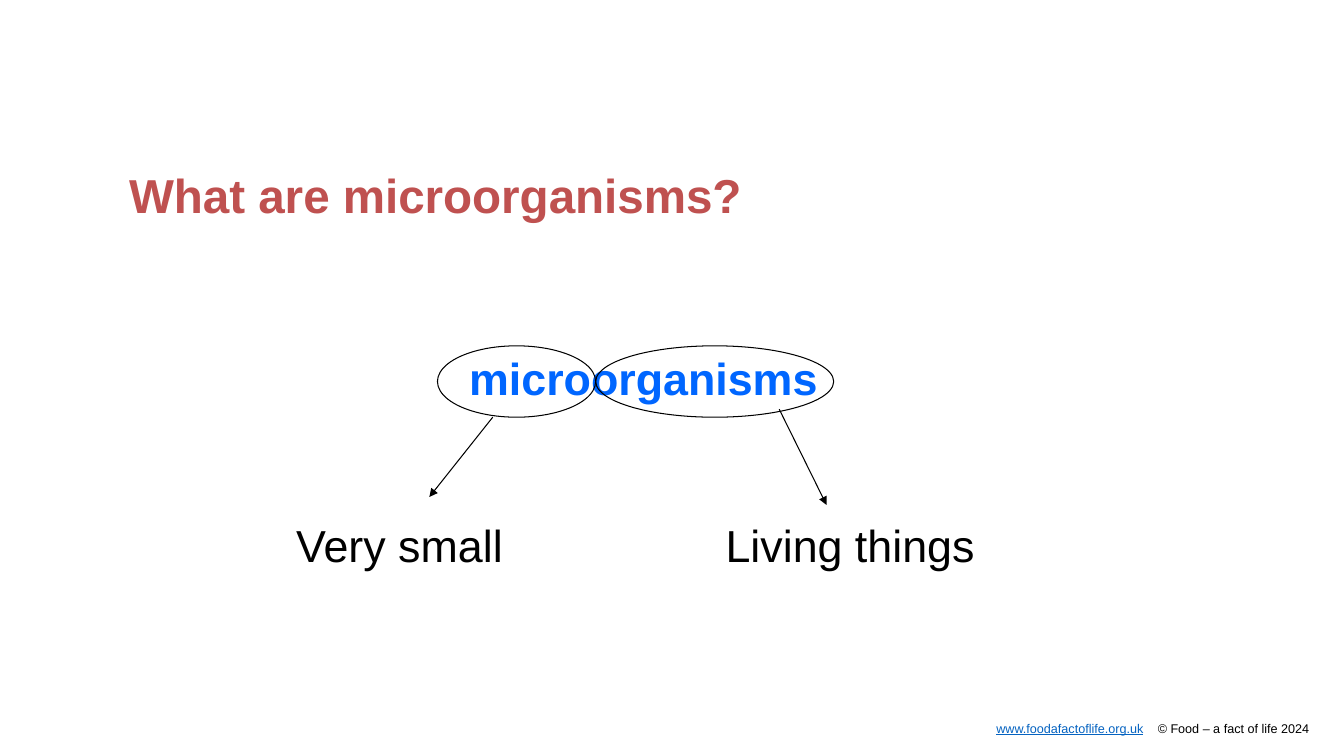
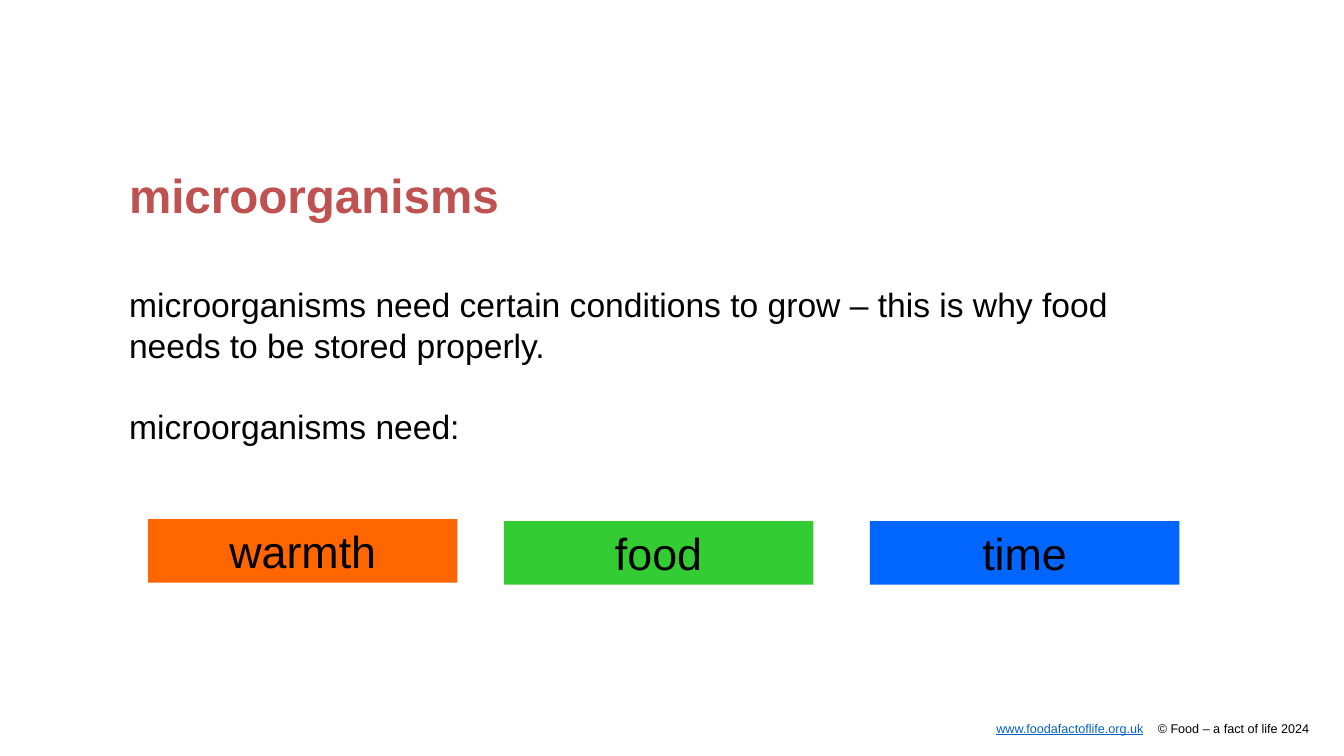
from lxml import etree
from pptx import Presentation
from pptx.dml.color import RGBColor
from pptx.enum.shapes import MSO_CONNECTOR, MSO_SHAPE
from pptx.enum.text import MSO_ANCHOR, PP_ALIGN
from pptx.oxml.ns import qn
from pptx.util import Pt

LEFT, CENTER = PP_ALIGN.LEFT, PP_ALIGN.CENTER
TOP = MSO_ANCHOR.TOP
OVAL, RECTANGLE = MSO_SHAPE.OVAL, MSO_SHAPE.RECTANGLE
STRAIGHT = MSO_CONNECTOR.STRAIGHT

BLACK = RGBColor(0x00, 0x00, 0x00)
RED = RGBColor(0xBF, 0x51, 0x50)
LINK_BLUE = RGBColor(0x05, 0x63, 0xC1)
BLUE = RGBColor(0x00, 0x66, 0xFF)
ORANGE = RGBColor(0xFF, 0x66, 0x00)
GREEN = RGBColor(0x33, 0xCC, 0x33)

FONT = "Arial"
MARGIN = 92.2
CONTENT_WIDTH = 765.4
LABEL_HEIGHT = 45.4
LABEL_SIZE = 32
LINE_WIDTH = 0.75


class Deck:
    """Holds the shared style and the current slide."""

    def __init__(self):
        self.presentation = Presentation()
        self.presentation.slide_width = Pt(960)
        self.presentation.slide_height = Pt(540)
        self.slide = None

    def add_slide(self, title):
        layout = self.presentation.slide_layouts[6]
        self.slide = self.presentation.slides.add_slide(layout)
        self.footer()
        paragraph = self.text_box(MARGIN, 123.1, CONTENT_WIDTH, 57)
        paragraph.line_spacing = 0.9
        self.run(paragraph, title, 34, RED, bold=True)

    def run(self, paragraph, text, size, color=BLACK, bold=False, underline=False):
        run = paragraph.add_run()
        run.text = text
        font = run.font
        font.name, font.size, font.bold = FONT, Pt(size), bold
        font.underline = underline
        font.color.rgb = color

    def frame(self, shape, align, inset_x, inset_y):
        """Prepare the text frame of a shape and return its first paragraph."""
        frame = shape.text_frame
        frame.word_wrap = True
        frame.vertical_anchor = TOP
        frame.margin_left = frame.margin_right = Pt(inset_x)
        frame.margin_top = frame.margin_bottom = Pt(inset_y)
        paragraph = frame.paragraphs[0]
        paragraph.alignment = align
        return paragraph

    def text_box(self, x, y, width, height, align=LEFT, inset_x=0, inset_y=0):
        box = self.slide.shapes.add_textbox(Pt(x), Pt(y), Pt(width), Pt(height))
        return self.frame(box, align, inset_x, inset_y)

    def footer(self):
        paragraph = self.text_box(711.7, 514.8, 230, 10.8)
        # The tab stop separates the address from the copyright line
        tabs = etree.SubElement(paragraph._p.get_or_add_pPr(), qn("a:tabLst"))
        etree.SubElement(tabs, qn("a:tab"), pos=str(Pt(115.3)), algn="l")
        self.run(paragraph, "www.foodafactoflife.org.uk", 9, LINK_BLUE, underline=True)
        self.run(paragraph, "\t© Food – a fact of life 2024", 9)

    def label(self, text, x, y, width, align=LEFT, color=BLACK, bold=False):
        paragraph = self.text_box(x, y, width, LABEL_HEIGHT, align, 7.2, 3.6)
        self.run(paragraph, text, LABEL_SIZE, color, bold)

    def body(self, texts):
        paragraph = self.text_box(MARGIN, 202.8, CONTENT_WIDTH, 120)
        frame = self.slide.shapes[-1].text_frame
        for index, text in enumerate(texts):
            if index:
                paragraph = frame.add_paragraph()
                paragraph.space_before = Pt(29)
            paragraph.line_spacing = Pt(29)
            self.run(paragraph, text, 24)

    def shape(self, kind, x, y, width, height):
        shape = self.slide.shapes.add_shape(kind, Pt(x), Pt(y), Pt(width), Pt(height))
        shape.shadow.inherit = False
        return shape

    def ring(self, x, y, width, height):
        ring = self.shape(OVAL, x, y, width, height)
        ring.fill.background()
        ring.line.color.rgb = BLACK
        ring.line.width = Pt(LINE_WIDTH)

    def block(self, text, color, x, y, width):
        block = self.shape(RECTANGLE, x, y, width, LABEL_HEIGHT)
        block.fill.solid()
        block.fill.fore_color.rgb = color
        block.line.fill.background()
        paragraph = self.frame(block, CENTER, 7.2, 3.6)
        self.run(paragraph, text, LABEL_SIZE)

    def arrow(self, start, end):
        points = [Pt(value) for value in (*start, *end)]
        arrow = self.slide.shapes.add_connector(STRAIGHT, *points)
        arrow.line.color.rgb = BLACK
        arrow.line.width = Pt(LINE_WIDTH)
        etree.SubElement(arrow.line._get_or_add_ln(), qn("a:tailEnd"), type="triangle")
        etree.SubElement(arrow._element.spPr, qn("a:effectLst"))


def word_slide(deck):
    deck.add_slide("What are microorganisms?")
    deck.label("microorganisms", 159.1, 247, 601.2, CENTER, BLUE, bold=True)

    # Each part of the word: ring, arrow and meaning
    parts = [
        (312.5, 113, (352, 298), (306.7, 355), "Very small", 204.5),
        (425.5, 170, (556.6, 292.3), (590.4, 360.7), "Living things", 511.2),
    ]
    for ring_x, ring_width, start, end, meaning, meaning_x in parts:
        deck.ring(ring_x, 247, ring_width, 51)
        deck.arrow(start, end)
        deck.label(meaning, meaning_x, 366.5, 238)


def conditions_slide(deck):
    deck.add_slide("microorganisms")
    deck.body([
        "microorganisms need certain conditions to grow – this is why food "
        "needs to be stored properly.",
        "microorganisms need:",
    ])

    # Conditions for growth
    conditions = [
        ("warmth", ORANGE, 105.8, 370.8),
        ("food", GREEN, 360, 372.2),
        ("time", BLUE, 621.4, 372.2),
    ]
    for text, color, x, y in conditions:
        deck.block(text, color, x, y, 221)


def main():
    deck = Deck()
    word_slide(deck)
    conditions_slide(deck)
    deck.presentation.save("out.pptx")


if __name__ == "__main__":
    main()
